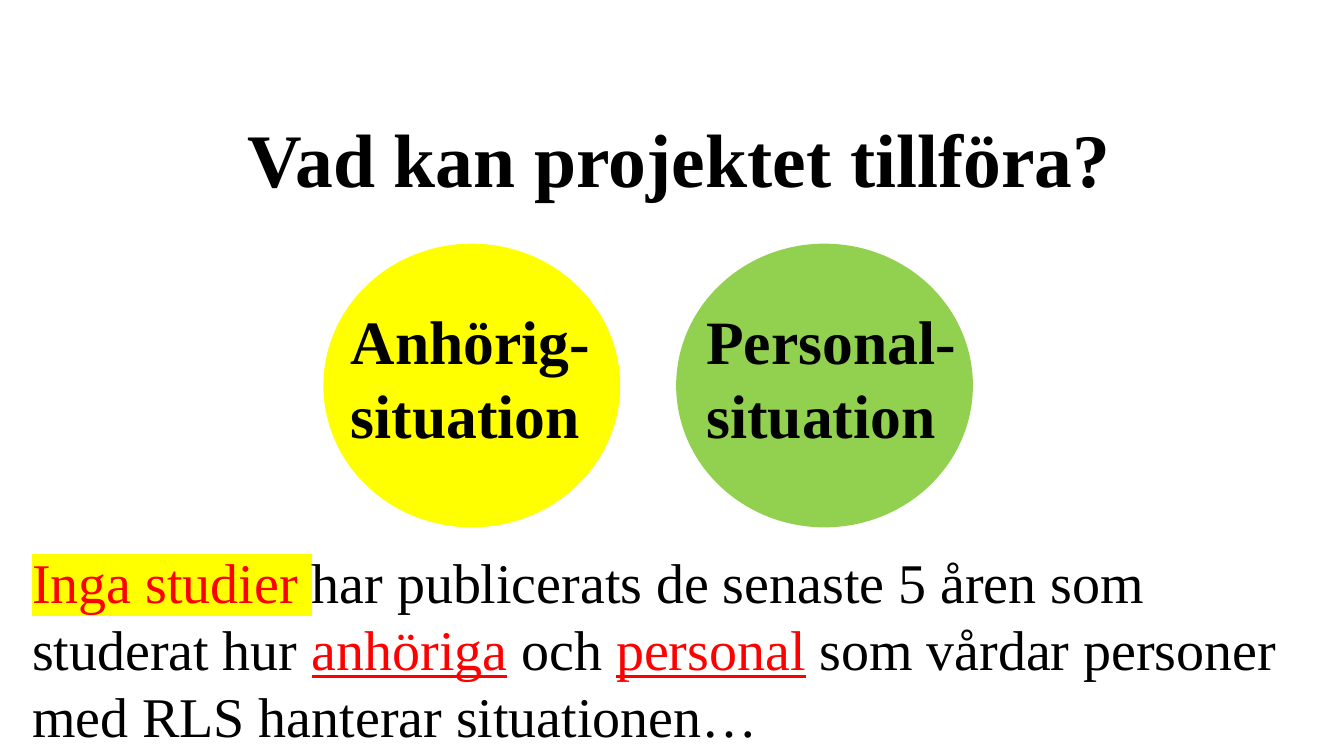
from lxml.etree import SubElement
from pptx import Presentation
from pptx.dml.color import RGBColor
from pptx.enum.shapes import MSO_SHAPE
from pptx.enum.text import MSO_ANCHOR, PP_ALIGN
from pptx.oxml.ns import qn
from pptx.util import Cm, Pt

# Content
FONT = "Times New Roman"
BLACK, RED, YELLOW, GREEN = "000000", "FF0000", "FFFF00", "92D050"

TITLE = "Vad kan projektet tillföra?"
CIRCLES = [  # lines, fill, label left, label width (cm)
    (("Anhörig-", "situation"), YELLOW, 8.59, 6.6),
    (("Personal-", "situation"), GREEN, 17.55, 6.86),
]
FINDING = [  # text, colour, underlined, highlight
    ("Inga studier ", RED, False, YELLOW),
    ("har publicerats de senaste 5 åren som studerat hur ", BLACK, False, None),
    ("anhöriga", RED, True, None),
    (" och ", BLACK, False, None),
    ("personal", RED, True, None),
    (" som vårdar personer med RLS hanterar situationen…", BLACK, False, None),
]

# Layout in cm
CIRCLE_LEFT, CIRCLE_TOP, CIRCLE_W, CIRCLE_H = 8.23, 6.22, 7.32, 6.99
CIRCLE_STEP = 8.89
LABEL_TOP, LABEL_H = 7.52, 4.01


def color(value):
    return RGBColor.from_string(value)


def add_run(p, text, fill=BLACK, highlight=None, **fmt):
    r = p.add_run()
    r.text = text
    for name, value in {"name": FONT, **fmt}.items():
        setattr(r.font, name, value)
    r.font.color.rgb = color(fill)
    if highlight:
        rpr = r.font._element
        hl = SubElement(rpr, qn("a:highlight"))
        SubElement(hl, qn("a:srgbClr"), val=highlight)
        rpr.find(qn("a:solidFill")).addnext(hl)


def add_text(s, left, top, width, height, wrap=True):
    sp = s.shapes.add_textbox(Cm(left), Cm(top), Cm(width), Cm(height))
    tf = sp.text_frame
    tf.word_wrap = wrap
    tf.vertical_anchor = MSO_ANCHOR.TOP
    return tf


def add_circle(s, left, fill):
    sp = s.shapes.add_shape(MSO_SHAPE.OVAL, Cm(left), Cm(CIRCLE_TOP),
                            Cm(CIRCLE_W), Cm(CIRCLE_H))
    sp.shadow.inherit = False
    sp.fill.solid()
    sp.fill.fore_color.rgb = color(fill)
    sp.line.color.rgb = color(fill)
    sp.line.width = Pt(4.5)


def main():
    prs = Presentation()
    prs.slide_width, prs.slide_height = Cm(33.87), Cm(19.05)
    s = prs.slides.add_slide(prs.slide_layouts[6])

    # Finding at the bottom
    p = add_text(s, 0.56, 13.67, 33.15, 5.38).paragraphs[0]
    for text, fill, underline, highlight in FINDING:
        add_run(p, text, fill, highlight, size=Pt(40), underline=underline)

    # Circles with labels
    for i, (lines, fill, left, width) in enumerate(CIRCLES):
        add_circle(s, CIRCLE_LEFT + i * CIRCLE_STEP, fill)
        tf = add_text(s, left, LABEL_TOP, width, LABEL_H, wrap=False)
        for n, line in enumerate(lines):
            p = tf.add_paragraph() if n else tf.paragraphs[0]
            add_run(p, line, size=Pt(44), bold=True)

    # Title
    p = add_text(s, 2.51, 2.95, 29.21, 3.68).paragraphs[0]
    p.alignment = PP_ALIGN.CENTER
    p.line_spacing = 0.9
    add_run(p, TITLE, size=Pt(54), bold=True)

    prs.save("out.pptx")


if __name__ == "__main__":
    main()
